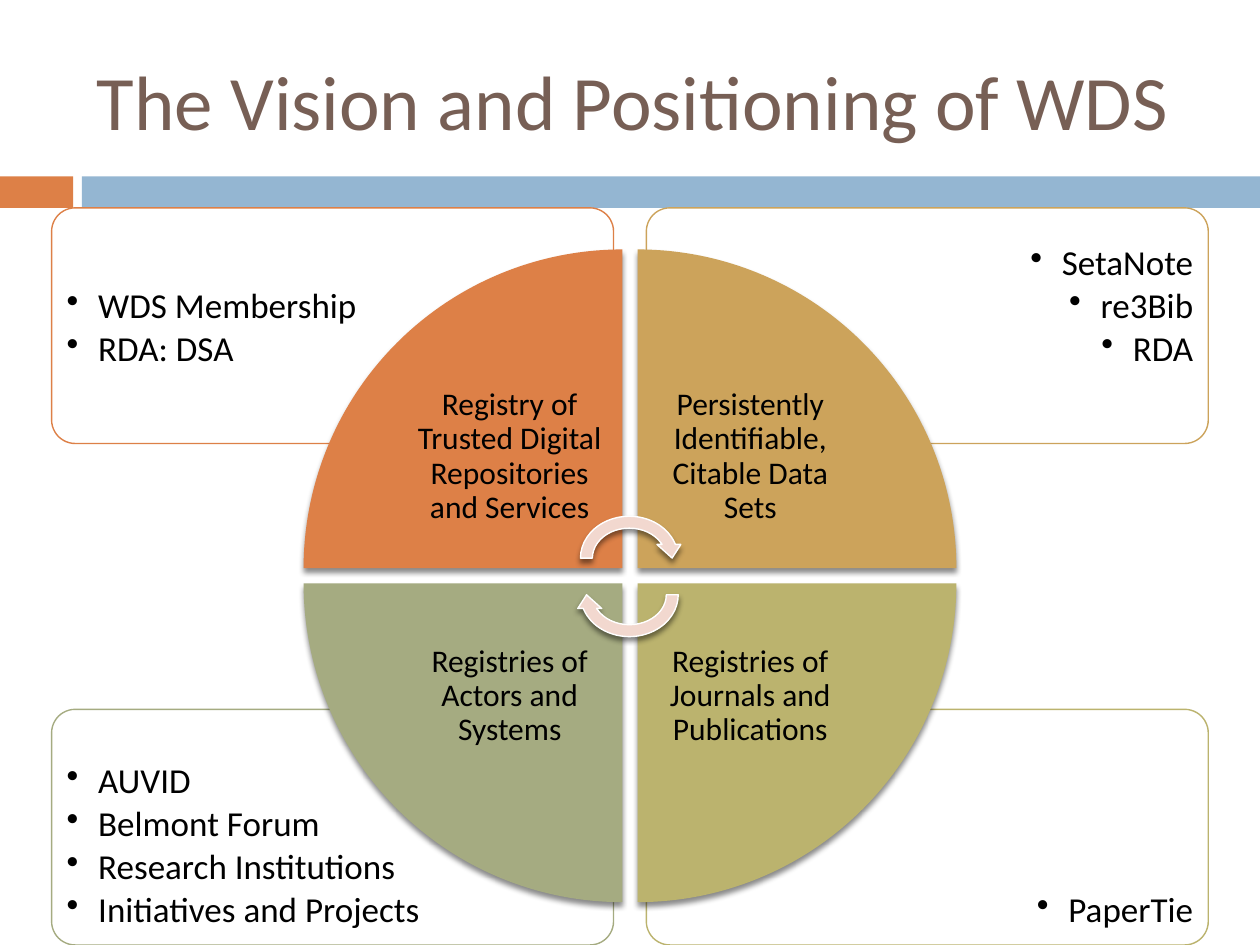
from dataclasses import dataclass

from lxml.etree import SubElement
from pptx import Presentation
from pptx.dml.color import RGBColor
from pptx.enum.shapes import MSO_SHAPE as Preset
from pptx.enum.text import MSO_ANCHOR as Anchor, PP_ALIGN as Align
from pptx.oxml.ns import qn
from pptx.util import Inches, Pt

FONT = "Calibri"
BLACK, WHITE, BROWN = "000000", "FFFFFF", "775F55"
ORANGE, BLUE, PINK = "DD8047", "94B6D2", "F2D8CF"


@dataclass(frozen=True)
class Frame:
    left: float
    top: float
    width: float
    height: float

    def emu(self) -> list:
        return [Inches(v) for v in (self.left, self.top, self.width, self.height)]


@dataclass(frozen=True)
class Grid:
    first: Frame
    column_step: float
    row_step: float

    def cell(self, column: int, row: int) -> Frame:
        first = self.first
        return Frame(first.left + column * self.column_step,
                     first.top + row * self.row_step, first.width, first.height)


@dataclass(frozen=True)
class Quadrant:
    column: int
    row: int
    turn: int
    color: str
    label: str
    examples: tuple


CARDS = Grid(Frame(0.41, 1.65, 4.46, 1.87), 4.72, 3.98)
LISTS = Grid(Frame(0.45, 1.69, 3.04, 1.32), 6.06, 4.45)
WEDGES = Grid(Frame(2.41, 1.98, 2.53, 2.53), 2.65, 2.65)
LABELS = Grid(Frame(3.15, 2.73, 1.79, 1.79), 1.91, 1.9)
ARROWS = Grid(Frame(4.56, 4.05, 0.87, 0.76), 0, 0.29)

QUADRANTS = (
    Quadrant(0, 0, 0, ORANGE, "Registry of Trusted Digital Repositories and Services",
             ("WDS Membership", "RDA: DSA")),
    Quadrant(1, 0, 90, "CCA35B", "Persistently Identifiable, Citable Data Sets",
             ("SetaNote", "re3Bib", "RDA")),
    Quadrant(1, 1, 180, "BBB36E", "Registries of Journals and Publications",
             ("PaperTie",)),
    Quadrant(0, 1, 270, "A5AB81", "Registries of Actors and Systems",
             ("AUVID", "Belmont Forum", "Research Institutions",
              "Initiatives and Projects")),
)


def rgb(color: str) -> RGBColor:
    return RGBColor.from_string(color)


def add_preset(slide, preset, frame: Frame, fill: str, line: str = "", turn: int = 0):
    shape = slide.shapes.add_shape(preset, *frame.emu())
    shape.shadow.inherit = False
    shape.rotation = turn
    shape.fill.solid()
    shape.fill.fore_color.rgb = rgb(fill)
    if line:
        shape.line.color.rgb = rgb(line)
        shape.line.width = Pt(0.79)
    else:
        shape.line.fill.background()
    return shape


def add_alpha(color_element, percent: int) -> None:
    SubElement(color_element, qn("a:alpha"), val=str(percent * 1000))


def drop_shadow(shape) -> None:
    effects = shape.element.spPr.find(qn("a:effectLst"))
    shadow = SubElement(effects, qn("a:outerShdw"), blurRad=str(Pt(3)),
                        dist=str(Pt(2.4)), dir="5400000", rotWithShape="0")
    add_alpha(SubElement(shadow, qn("a:srgbClr"), val=BLACK), 45)


def add_bullet(paragraph) -> None:
    properties = paragraph._p.get_or_add_pPr()
    properties.set("marL", str(Inches(0.25)))
    properties.set("indent", str(Inches(-0.25)))
    SubElement(properties, qn("a:buChar"), char="•")


def add_text(slide, frame: Frame, lines: tuple, size: int, color: str = BLACK,
             align=Align.LEFT, anchor=Anchor.MIDDLE, inset: tuple = (0.1, 0.05),
             spacing: float = 1.0, bulleted: bool = False) -> None:
    text_frame = slide.shapes.add_textbox(*frame.emu()).text_frame
    text_frame.word_wrap = True
    text_frame.vertical_anchor = anchor
    text_frame.margin_left = text_frame.margin_right = Inches(inset[0])
    text_frame.margin_top = text_frame.margin_bottom = Inches(inset[1])
    text_frame.text = "\n".join(lines)
    for paragraph in text_frame.paragraphs:
        paragraph.alignment = align
        paragraph.line_spacing = spacing
        if bulleted:
            paragraph.level = 1
            paragraph.space_after = Pt(3)
            add_bullet(paragraph)
        for run in paragraph.runs:
            run.font.name = FONT
            run.font.size = Pt(size)
            run.font.color.rgb = rgb(color)


def add_card(slide, quadrant: Quadrant) -> None:
    place = quadrant.column, quadrant.row
    card = add_preset(slide, Preset.ROUNDED_RECTANGLE, CARDS.cell(*place),
                      WHITE, quadrant.color)
    card.adjustments[0] = 0.1
    add_alpha(card.element.spPr.find(qn("a:solidFill"))[0], 90)
    add_text(slide, LISTS.cell(*place), quadrant.examples, 20,
             align=Align.RIGHT if quadrant.column else Align.LEFT,
             anchor=Anchor.BOTTOM, inset=(0.08, 0.08), spacing=0.9, bulleted=True)


def add_wedge(slide, quadrant: Quadrant) -> None:
    place = quadrant.column, quadrant.row
    drop_shadow(add_preset(slide, Preset.PIE_WEDGE, WEDGES.cell(*place),
                           quadrant.color, turn=quadrant.turn))
    add_text(slide, LABELS.cell(*place), (quadrant.label,), 18, align=Align.CENTER,
             inset=(0.14, 0.14), spacing=0.9)


def main() -> None:
    deck = Presentation()
    deck.slide_width, deck.slide_height = Inches(10), Inches(7.5)
    slide = deck.slides.add_slide(deck.slide_layouts[6])

    add_preset(slide, Preset.RECTANGLE, Frame(0, 1.4, 0.58, 0.25), ORANGE)
    add_preset(slide, Preset.RECTANGLE, Frame(0.65, 1.4, 9.35, 0.25), BLUE)
    add_text(slide, Frame(0.67, 0.25, 8.92, 1.08),
             ("The Vision and Positioning of WDS",), 44, BROWN)

    for quadrant in QUADRANTS:
        add_card(slide, quadrant)
    for quadrant in QUADRANTS:
        add_wedge(slide, quadrant)
    for row in range(2):
        drop_shadow(add_preset(slide, Preset.CIRCULAR_ARROW, ARROWS.cell(0, row),
                               PINK, WHITE, turn=180 * row))

    deck.save("out.pptx")


if __name__ == "__main__":
    main()
